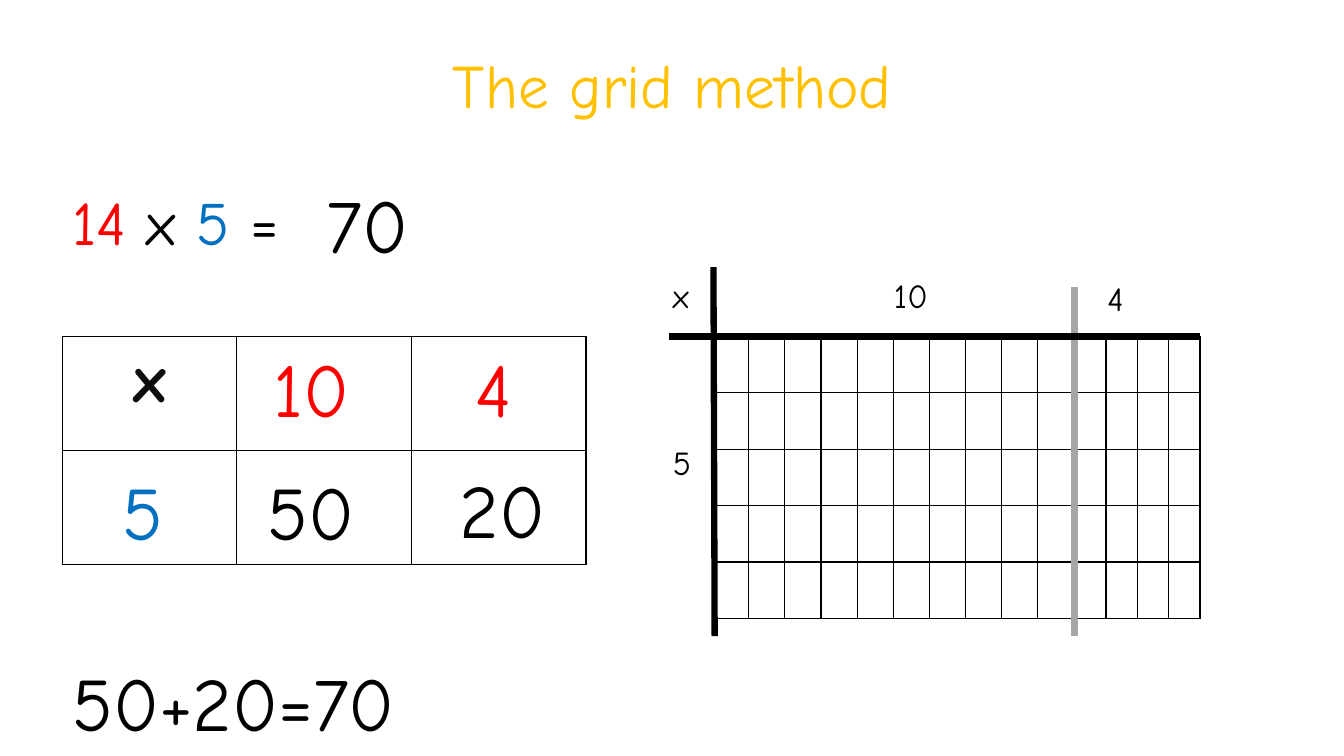
from lxml.etree import SubElement
from pptx import Presentation
from pptx.dml.color import RGBColor
from pptx.enum.shapes import MSO_CONNECTOR
from pptx.enum.text import MSO_ANCHOR, PP_ALIGN
from pptx.oxml import parse_xml
from pptx.oxml.ns import nsdecls, qn
from pptx.util import Cm, Pt

FONT = "Comic Neue"
GOLD = RGBColor(0xFF, 0xC0, 0x00)
RED = RGBColor(0xFF, 0x00, 0x00)
BLUE = RGBColor(0x00, 0x70, 0xC0)
BLACK = RGBColor(0x00, 0x00, 0x00)
INK = RGBColor(0x0D, 0x0D, 0x0D)
GREY = RGBColor(0xA6, 0xA6, 0xA6)
WHITE = RGBColor(0xFF, 0xFF, 0xFF)

prs = Presentation()
prs.slide_width, prs.slide_height = Cm(33.87), Cm(19.05)
s = prs.slides.add_slide(prs.slide_layouts[6])


def add_text(x, y, w, h, runs, size, wrap=True):
    tf = s.shapes.add_textbox(Cm(x), Cm(y), Cm(w), Cm(h)).text_frame
    tf.word_wrap = wrap
    for text, color in runs:
        r = tf.paragraphs[0].add_run()
        r.text = text
        r.font.name, r.font.size = FONT, Pt(size)
        r.font.color.rgb = color
    return tf


def add_grid(x, y, rows, cols, col_w, row_h, fill=None):
    table = s.shapes.add_table(rows, cols, Cm(x), Cm(y),
                               Cm(cols * col_w), Cm(rows * row_h)).table
    table.first_row = table.horz_banding = False
    for col in table.columns:
        col.width = Cm(col_w)
    for row in table.rows:
        row.height = Cm(row_h)
    for cell in table.iter_cells():
        tcPr = cell._tc.get_or_add_tcPr()
        for side in ("lnL", "lnR", "lnT", "lnB"):
            tcPr.append(parse_xml(
                f'<a:{side} {nsdecls("a")} w="12700"><a:solidFill>'
                f'<a:srgbClr val="{BLACK}"/></a:solidFill></a:{side}>'))
        if fill is None:
            cell.fill.background()
        else:
            cell.fill.solid()
            cell.fill.fore_color.rgb = fill
    return table


# Title
tf = add_text(2.34, 0.81, 29.21, 2.82, [("The grid method", GOLD)], 44)
tf.vertical_anchor = MSO_ANCHOR.MIDDLE
tf.paragraphs[0].alignment = PP_ALIGN.CENTER
tf.paragraphs[0].line_spacing = 0.9

# Multiplication table
table = add_grid(1.57, 8.48, 2, 3, 4.4, 2.87, WHITE)
p = table.cell(0, 0).text_frame.paragraphs[0]
p.text = "x"
p.alignment = PP_ALIGN.CENTER
font = p.runs[0].font
font.name, font.size, font.bold = FONT, Pt(48), True
font.color.rgb = INK

# Calculation and its answer
add_text(1.57, 4.5, 6.2, 2.2,
         [("14 ", RED), ("x ", BLACK), ("5 ", BLUE), ("=", BLACK)], 44)
add_text(1.57, 16.41, 12, 2.57, [("50+20=70", BLACK)], 54)

# Large numbers: factors, partial products and total
for text, x, y, color in [
    ("10", 6.65, 8.48, RED), ("4", 11.73, 8.48, RED), ("5", 2.84, 11.58, BLUE),
    ("50", 6.5, 11.58, BLACK), ("20", 11.33, 11.53, BLACK),
    ("70", 7.98, 4.37, BLACK),
]:
    add_text(x, y, 3.28, 2.57, [(text, color)], 54)

# Area model: ten columns and four columns
add_grid(17.96, 8.48, 5, 10, 0.91, 1.42)
add_grid(27.08, 8.48, 5, 4, 0.79, 1.42)

# Thick axes and divider
for x1, y1, x2, y2, color in [
    (27.08, 7.24, 27.08, 16.03, GREY),
    (30.23, 8.48, 16.87, 8.48, BLACK),
    (18.01, 16.03, 17.98, 6.73, BLACK),
]:
    line = s.shapes.add_connector(MSO_CONNECTOR.STRAIGHT,
                                  Cm(x1), Cm(y1), Cm(x2), Cm(y2))
    line.line.color.rgb = color
    line.line.width = Pt(4.5)
    SubElement(line._element.spPr, qn("a:effectLst"))

# Area model labels
for text, x, y, w in [
    ("x", 16.71, 6.81, 1.02), ("10", 22.28, 6.81, 1.42),
    ("4", 27.66, 6.88, 1.04), ("5", 16.71, 11, 1.04),
]:
    add_text(x, y, w, 1.27, [(text, BLACK)], 24, wrap=False)

prs.save("out.pptx")
